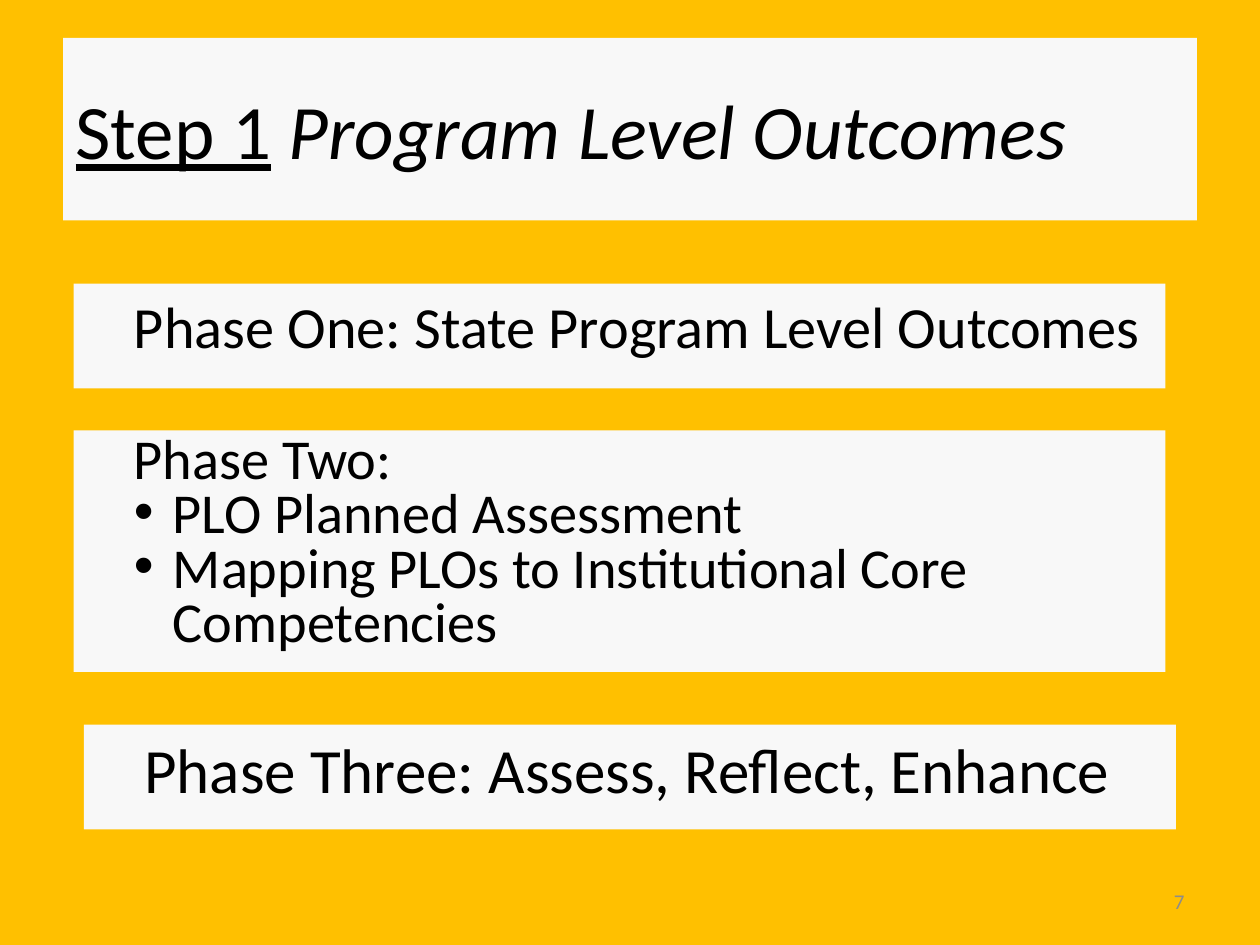
from dataclasses import dataclass

from lxml import etree
from pptx import Presentation
from pptx import util as u
from pptx.dml.color import RGBColor
from pptx.enum import shapes, text
from pptx.oxml import ns

AMBER = RGBColor(0xFF, 0xC0, 0x00)
PANEL = RGBColor(0xF8, 0xF8, 0xF8)
BLACK = RGBColor(0x00, 0x00, 0x00)
GRAY = RGBColor(0x8C, 0x8C, 0x8C)
FONT = "Calibri"
HEADING_INDENT = 27.36
BULLET_INDENT = 49.68
BULLET_HANGING = 22.32


@dataclass(frozen=True)
class Box:
    left: float
    top: float
    width: float
    height: float


@dataclass(frozen=True)
class Phase:
    box: Box
    heading: str
    size: float
    bullets: tuple[str, ...] = ()
    line_spacing: float = 1.0


PHASES = (
    Phase(Box(42, 162, 624, 60), "Phase One: State Program Level Outcomes", 33.3),
    Phase(
        Box(42, 246, 624, 138),
        "Phase Two:",
        32.2,
        ("PLO Planned Assessment", "Mapping PLOs to Institutional Core Competencies"),
        0.8,
    ),
    Phase(Box(48, 414, 624, 60), "Phase Three: Assess, Reflect, Enhance", 36),
)


def place(shape, box: Box) -> None:
    shape.left, shape.top = u.Pt(box.left), u.Pt(box.top)
    shape.width, shape.height = u.Pt(box.width), u.Pt(box.height)


def fill_panel(shape, anchor) -> None:
    shape.fill.solid()
    shape.fill.fore_color.rgb = PANEL
    shape.line.fill.background()
    frame = shape.text_frame
    frame.word_wrap = True
    frame.auto_size = text.MSO_AUTO_SIZE.NONE
    frame.vertical_anchor = anchor


def add_run(paragraph, words: str, size: float, color: RGBColor = BLACK):
    run = paragraph.add_run()
    run.text = words
    run.font.name = FONT
    run.font.size = u.Pt(size)
    run.font.color.rgb = color
    return run


def set_indent(paragraph, bulleted: bool) -> None:
    properties = paragraph._p.get_or_add_pPr()
    left = BULLET_INDENT if bulleted else HEADING_INDENT
    hanging = BULLET_HANGING if bulleted else 0
    properties.set("marL", str(u.Pt(left)))
    properties.set("indent", str(-u.Pt(hanging)))
    if bulleted:
        etree.SubElement(properties, ns.qn("a:buFont")).set("typeface", "Arial")
        etree.SubElement(properties, ns.qn("a:buChar")).set("char", "•")
    else:
        etree.SubElement(properties, ns.qn("a:buNone"))


def draw_phase(shape, phase: Phase) -> None:
    place(shape, phase.box)
    fill_panel(shape, text.MSO_ANCHOR.TOP)
    frame = shape.text_frame
    for index, words in enumerate((phase.heading, *phase.bullets)):
        paragraph = frame.add_paragraph() if index else frame.paragraphs[0]
        set_indent(paragraph, bulleted=index > 0)
        paragraph.alignment = text.PP_ALIGN.LEFT
        paragraph.space_before = u.Pt(0)
        paragraph.line_spacing = phase.line_spacing
        add_run(paragraph, words, phase.size)


def draw_title(shape) -> None:
    place(shape, Box(36, 21.6, 648, 104.4))
    fill_panel(shape, text.MSO_ANCHOR.MIDDLE)
    paragraph = shape.text_frame.paragraphs[0]
    paragraph.alignment = text.PP_ALIGN.LEFT
    add_run(paragraph, "Step 1", 44).font.underline = True
    add_run(paragraph, " ", 44)
    add_run(paragraph, "Program Level Outcomes", 44).font.italic = True


def draw_page_number(slide) -> None:
    shape = slide.shapes.add_textbox(u.Pt(516), u.Pt(500.4), u.Pt(168), u.Pt(28.8))
    shape.text_frame.word_wrap = True
    shape.text_frame.vertical_anchor = text.MSO_ANCHOR.MIDDLE
    paragraph = shape.text_frame.paragraphs[0]
    paragraph.alignment = text.PP_ALIGN.RIGHT
    add_run(paragraph, "7", 12, GRAY)


def add_panel(slide):
    shape = slide.shapes.add_shape(shapes.MSO_SHAPE.RECTANGLE, 0, 0, 0, 0)
    shape.shadow.inherit = False
    return shape


def main() -> None:
    presentation = Presentation()
    presentation.slide_width, presentation.slide_height = u.Pt(720), u.Pt(540)
    slide = presentation.slides.add_slide(presentation.slide_layouts[1])
    slide.background.fill.solid()
    slide.background.fill.fore_color.rgb = AMBER
    draw_title(slide.shapes.title)
    first, *others = PHASES
    draw_phase(slide.placeholders[1], first)
    draw_page_number(slide)
    for phase in others:
        draw_phase(add_panel(slide), phase)
    presentation.save("out.pptx")


if __name__ == "__main__":
    main()
